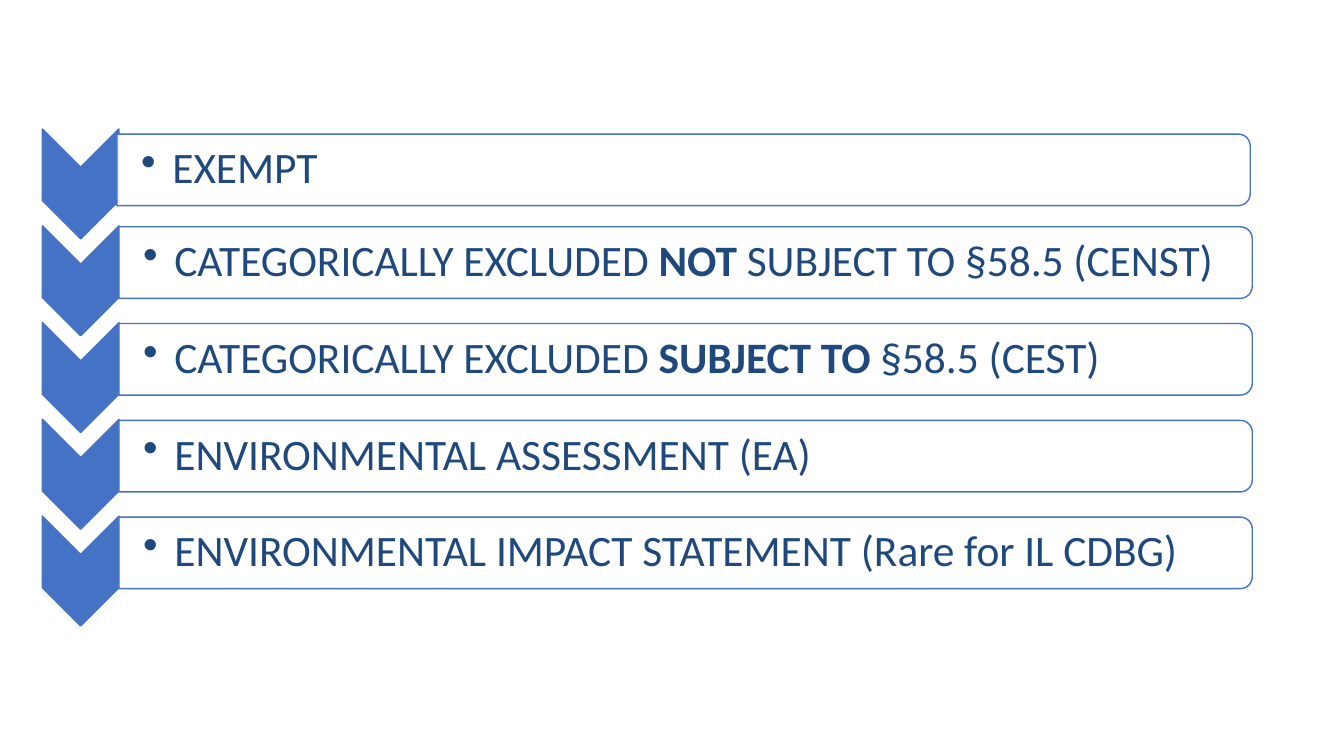
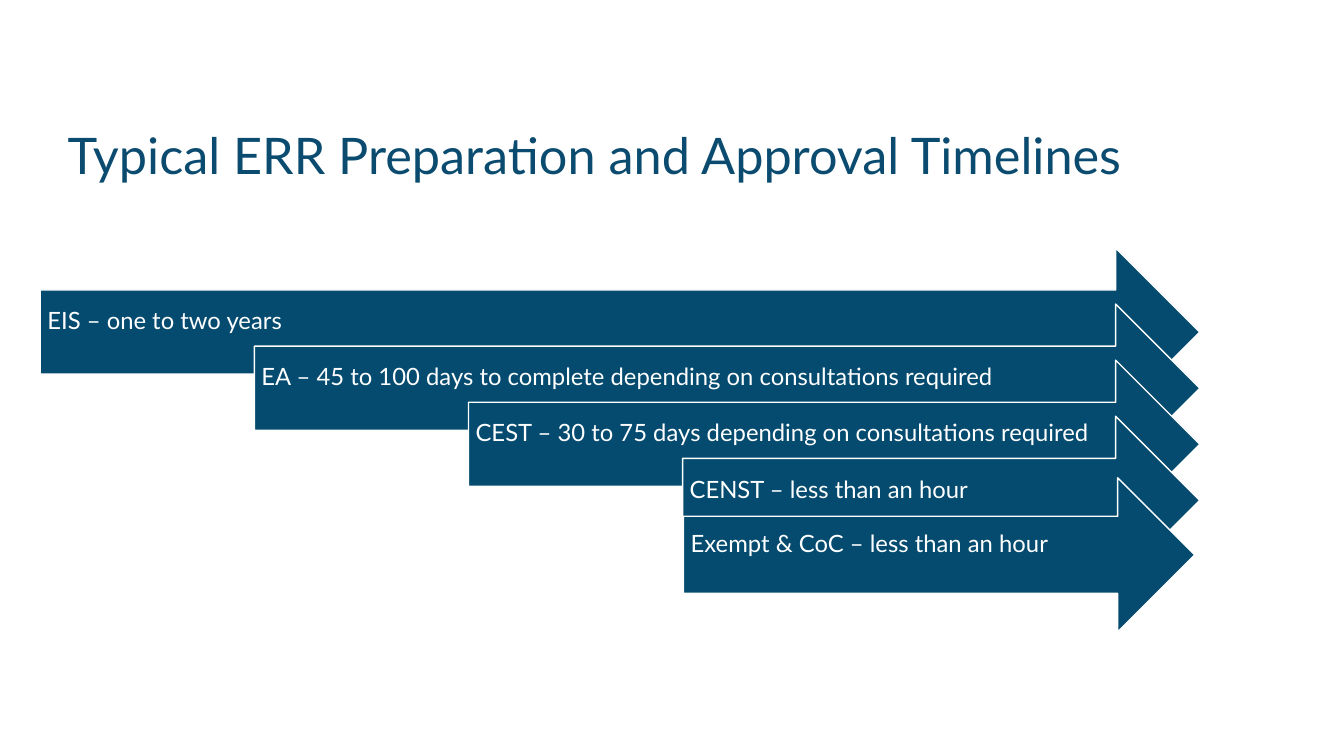
from dataclasses import dataclass

from lxml import etree
from pptx import Presentation
from pptx.dml.color import RGBColor
from pptx.enum.shapes import MSO_SHAPE
from pptx.enum.text import MSO_ANCHOR, MSO_AUTO_SIZE, PP_ALIGN
from pptx.oxml.ns import qn
from pptx.util import Inches, Pt

CHEVRON = MSO_SHAPE.CHEVRON
CARD = MSO_SHAPE.ROUND_2_SAME_RECTANGLE
ARROW = MSO_SHAPE.RIGHT_ARROW
MIDDLE = MSO_ANCHOR.MIDDLE
FIXED = MSO_AUTO_SIZE.NONE
LEFT = PP_ALIGN.LEFT
TITLE_ONLY, BLANK = 5, 6


@dataclass(frozen=True)
class Theme:
    """Colours, fonts and type sizes of the deck."""
    white: str = "FFFFFF"
    blue: str = "4472C4"
    navy: str = "1F497D"
    teal: str = "044B6F"
    head: str = "0A4B6F"
    list_font: str = "Calibri"
    main_font: str = "Lato"
    title_size: int = 36
    list_size: int = 31
    label_size: int = 17
    line: float = 1


THEME = Theme()

LEVELS = [
    [("EXEMPT", False)],
    [("CATEGORICALLY EXCLUDED ", False), ("NOT ", True),
     ("SUBJECT TO §58.5 (CENST)", False)],
    [("CATEGORICALLY EXCLUDED ", False), ("SUBJECT TO ", True),
     ("§58.5 (CEST)", False)],
    [("ENVIRONMENTAL ASSESSMENT (EA)", False)],
    [("ENVIRONMENTAL IMPACT STATEMENT (Rare for IL CDBG)", False)],
]

TIMES = [
    "EIS – one to two years",
    "EA – 45 to 100 days to complete depending on consultations required",
    "CEST – 30 to 75 days depending on consultations required",
    "CENST – less than an hour",
]
LAST_TIME = "Exempt & CoC – less than an hour"


def apply(item, values):
    """Set each attribute of item from a dict."""
    for name, value in values.items():
        setattr(item, name, value)


def inches(box):
    """Turn a box of numbers into lengths."""
    return [Inches(side) for side in box]


def add_form(slide, kind, box, fill, line, turn=0):
    """Add a flat shape that covers box once it is turned."""
    left, top, wide, high = box
    if turn:
        left, top = left + (wide - high) / 2, top + (high - wide) / 2
        wide, high = high, wide
    form = slide.shapes.add_shape(kind, *inches((left, top, wide, high)))
    form.rotation = turn
    form.shadow.inherit = False
    form.fill.solid()
    form.fill.fore_color.rgb = RGBColor.from_string(fill)
    form.line.color.rgb = RGBColor.from_string(line)
    form.line.width = Pt(THEME.line)
    return form


def set_alpha(form, share):
    """Set the opacity of a solid fill, in percent."""
    color = form.fill._xPr.find(qn("a:solidFill"))[0]
    etree.SubElement(color, qn("a:alpha"), val=str(share * 1000))


def set_text(form, parts, font, size, color, pads, bullet=0):
    """Write one left-aligned paragraph of (text, bold) parts."""
    frame = form.text_frame
    sides = ("margin_left", "margin_top", "margin_right", "margin_bottom")
    apply(frame, dict(zip(sides, inches(pads)), word_wrap=True,
                      auto_size=FIXED, vertical_anchor=MIDDLE))
    para = frame.paragraphs[0]
    apply(para, {"alignment": LEFT, "line_spacing": 0.9})
    if bullet:
        props = para._p.get_or_add_pPr()
        props.set("marL", str(Inches(bullet)))
        props.set("indent", str(-Inches(bullet)))
        etree.SubElement(props, qn("a:buChar"), char="•")
    for text, bold in parts:
        run = para.add_run()
        run.text = text
        apply(run.font, {"name": font, "size": Pt(size), "bold": bold})
        run.font.color.rgb = RGBColor.from_string(color)


def add_level(slide, box, parts, shift):
    """Add a chevron and its card, the card moved by shift."""
    left, top, wide, high = box
    add_form(slide, CHEVRON, (left, top, 0.76, 1.09),
             THEME.blue, THEME.blue, 90)
    place = (left + 0.76 + shift[0], top + 0.01 + shift[1], wide - 0.76, high)
    card = add_form(slide, CARD, place, THEME.white, THEME.blue, 90)
    set_alpha(card, 90)
    label = slide.shapes.add_textbox(*inches(place))
    set_text(label, parts, THEME.list_font, THEME.list_size, THEME.navy,
             (0.24, 0.02, 0.02, 0.02), bullet=0.31)


def build_levels(deck, box):
    """Add the slide that lists the review levels."""
    slide = deck.slides.add_slide(deck.slide_layouts[BLANK])
    left, top, wide, pitch = box
    for row, parts in enumerate(LEVELS):
        shift = (0, 0) if row else (-0.02, 0.04)
        add_level(slide, (left, top + row * pitch, wide, 0.71), parts, shift)


def add_title(slide, box, text):
    """Place and fill the title."""
    title = slide.shapes.title
    names = ("left", "top", "width", "height")
    apply(title, dict(zip(names, inches(box))))
    set_text(title, [(text, False)], THEME.main_font, THEME.title_size,
             THEME.head, (0.1, 0.05, 0.1, 0.05))


def add_time(slide, box, text):
    """Add one arrow with its label inside."""
    arrow = add_form(slide, ARROW, box, THEME.teal, THEME.white)
    set_text(arrow, [(text, False)], THEME.main_font, THEME.label_size,
             THEME.white, (0.07, 0.07, 0.28, 0.27))


def build_times(deck, box):
    """Add the slide with stepped arrows that share a right edge."""
    slide = deck.slides.add_slide(deck.slide_layouts[TITLE_ONLY])
    add_title(slide, (0.57, 0.84, 11.5, 1.45),
              "Typical ERR Preparation and Approval Timelines")
    left, top, wide, high = box
    step, drop = 6.37 / 3, high / 3
    for row, text in enumerate(TIMES):
        add_time(slide, (left + row * step, top + row * drop,
                         wide - row * step, high), text)
    add_time(slide, (left + 6.38, top + 2.28, 5.07, 1.53), LAST_TIME)


def main():
    """Build and save the deck."""
    deck = Presentation()
    apply(deck, {"slide_width": Inches(13.33), "slide_height": Inches(7.5)})
    build_levels(deck, (0.42, 1.28, 12, 0.96))
    build_times(deck, (0.4, 2.46, 11.5, 1.67))
    deck.save("out.pptx")


if __name__ == "__main__":
    main()
